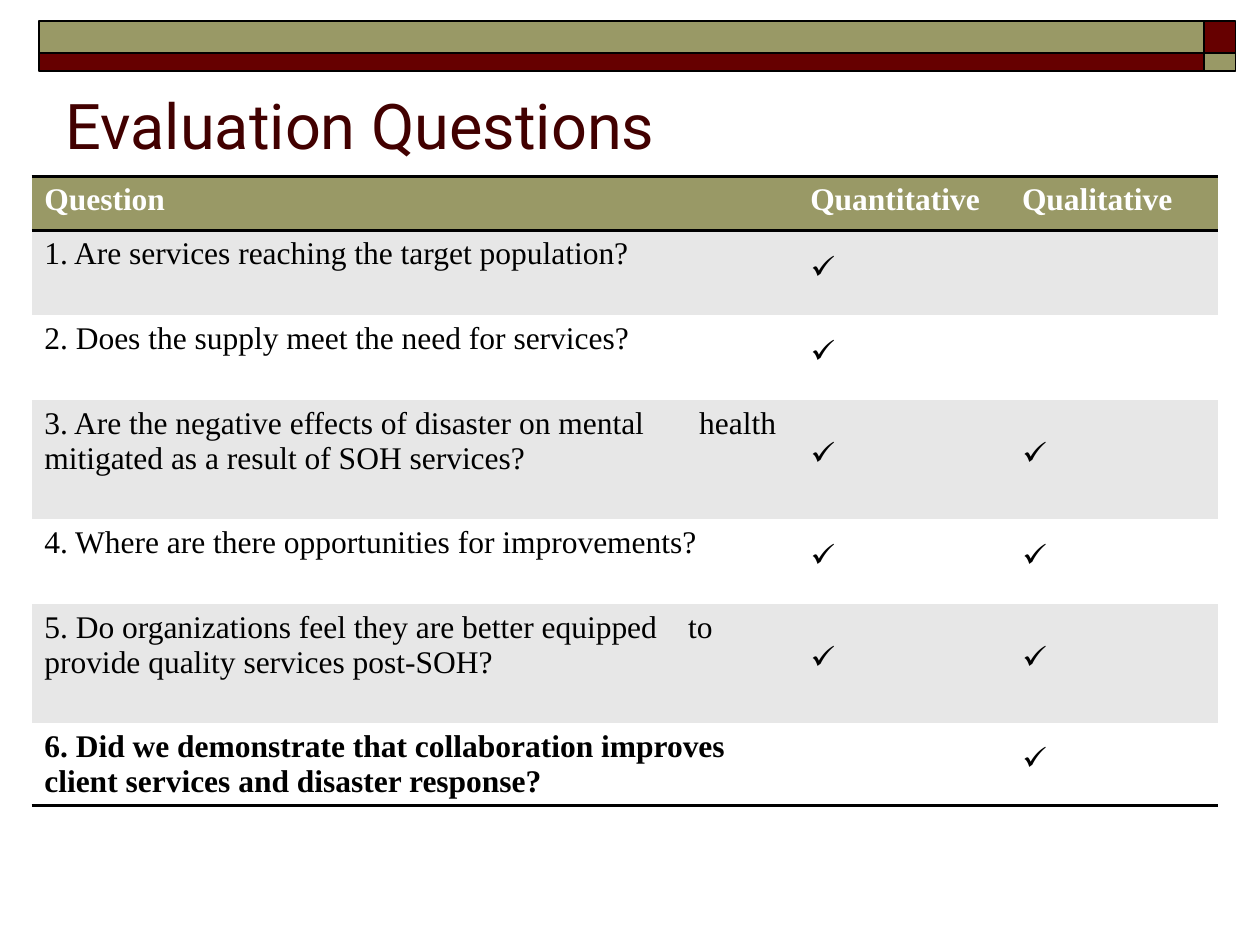
from pptx import Presentation
from pptx.dml.color import RGBColor as RGB
from pptx.enum.shapes import MSO_SHAPE as SHAPE
from pptx.enum.text import MSO_ANCHOR as ANCHOR, PP_ALIGN as ALIGN
from pptx.oxml import parse_xml
from pptx.oxml.ns import nsdecls, qn
from pptx.util import Cm, Pt

COLORS = {"olive": "999966", "maroon": "660000", "title": "420000",
          "band": "E7E7E7", "white": "FFFFFF", "black": "000000"}
NS = nsdecls("a")
RULE = ('<a:{tag} {ns} w="25400"><a:solidFill><a:srgbClr val="{color}"/>'
        '</a:solidFill></a:{tag}>')
CHECK_BULLET = [f'<a:buFont {NS} typeface="Wingdings" pitchFamily="2" charset="2"/>',
                f'<a:buChar {NS} char="ü"/>']
TABS = '<a:tabLst {ns}><a:tab pos="{pos}" algn="l"/></a:tabLst>'
NO_STYLE = "{2D5ABB26-0587-4C30-8999-92F81FD0307C}"


def add_run(p, text, font, size, color, bold=False):
    r = p.add_run()
    r.text = text
    r.font.name = font
    r.font.size = Pt(size)
    r.font.bold = bold
    r.font.color.rgb = RGB.from_string(COLORS[color])


prs = Presentation()
prs.slide_width, prs.slide_height = Cm(25.4), Cm(19.05)
s = prs.slides.add_slide(prs.slide_layouts[5])

bars = [(0.78, 0.43, 23.49, 0.64, "olive"), (24.27, 0.43, 0.64, 0.64, "maroon"),
        (0.78, 1.07, 23.49, 0.37, "maroon"), (24.27, 1.07, 0.64, 0.37, "olive")]
for x, y, w, h, color in bars:
    sp = s.shapes.add_shape(SHAPE.RECTANGLE, Cm(x), Cm(y), Cm(w), Cm(h))
    sp.shadow.inherit = False
    sp.fill.solid()
    sp.fill.fore_color.rgb = RGB.from_string(COLORS[color])
    sp.line.color.rgb = RGB.from_string(COLORS["black"])
    sp.line.width = Pt(1)

title = s.shapes.title
title.left, title.top, title.width, title.height = Cm(1.07), Cm(1.7), Cm(22.86), Cm(1.7)
tf = title.text_frame
tf.vertical_anchor = ANCHOR.BOTTOM
p = tf.paragraphs[0]
p.alignment = ALIGN.LEFT
add_run(p, "Evaluation Questions", "Roboto", 36, "title")

rows = [
    (1.09, "Question", "Quantitative", "Qualitative"),
    (1.71, "1. Are services reaching the target population?", True, False),
    (1.71, "2. Does the supply meet the need for services?", True, False),
    (2.4, "3. Are the negative effects of disaster on mental\thealth "
          "mitigated as a result of SOH services?", True, True),
    (1.71, "4. Where are there opportunities for improvements?", True, True),
    (2.4, "5. Do organizations feel they are better equipped\tto "
          "provide quality services post-SOH?", True, True),
    (1.65, "6. Did we demonstrate that collaboration improves "
           "client services and disaster response?", False, True),
]
tab_stops = {3: 13.2, 5: 12.98}
widths = [15.44, 4.27, 4.2]
last = len(rows) - 1
frame = s.shapes.add_table(len(rows), len(widths), Cm(0.64), Cm(3.55),
                           Cm(sum(widths)), Cm(sum(row[0] for row in rows)))
table = frame.table
table.horz_banding = False
table._tbl.tblPr.find(qn("a:tableStyleId")).text = NO_STYLE
for col, width in zip(table.columns, widths):
    col.width = Cm(width)

for i, (height, *values) in enumerate(rows):
    table.rows[i].height = Cm(height)
    fill = "olive" if i == 0 else "band" if i % 2 else "white"
    edges = {0: ["lnT", "lnB"], last: ["lnB"]}.get(i, [])
    for j, value in enumerate(values):
        cell = table.cell(i, j)
        cell.fill.solid()
        cell.fill.fore_color.rgb = RGB.from_string(COLORS[fill])
        cell.vertical_anchor = ANCHOR.MIDDLE if i and j else ANCHOR.TOP
        p = cell.text_frame.paragraphs[0]
        if value is True:
            for part in CHECK_BULLET:
                p._p.get_or_add_pPr().append(parse_xml(part))
            add_run(p, " ", "Times New Roman", 18, "black")
        elif value:
            add_run(p, value, "Times New Roman", 18, "black" if i else "white",
                    i == 0 or i == last)
            if i in tab_stops:
                tabs = TABS.format(ns=NS, pos=Cm(tab_stops[i]))
                p._p.get_or_add_pPr().append(parse_xml(tabs))
        for k, tag in enumerate(edges):
            rule = RULE.format(tag=tag, ns=NS, color=COLORS["black"])
            cell._tc.get_or_add_tcPr().insert(k, parse_xml(rule))

prs.save("out.pptx")
